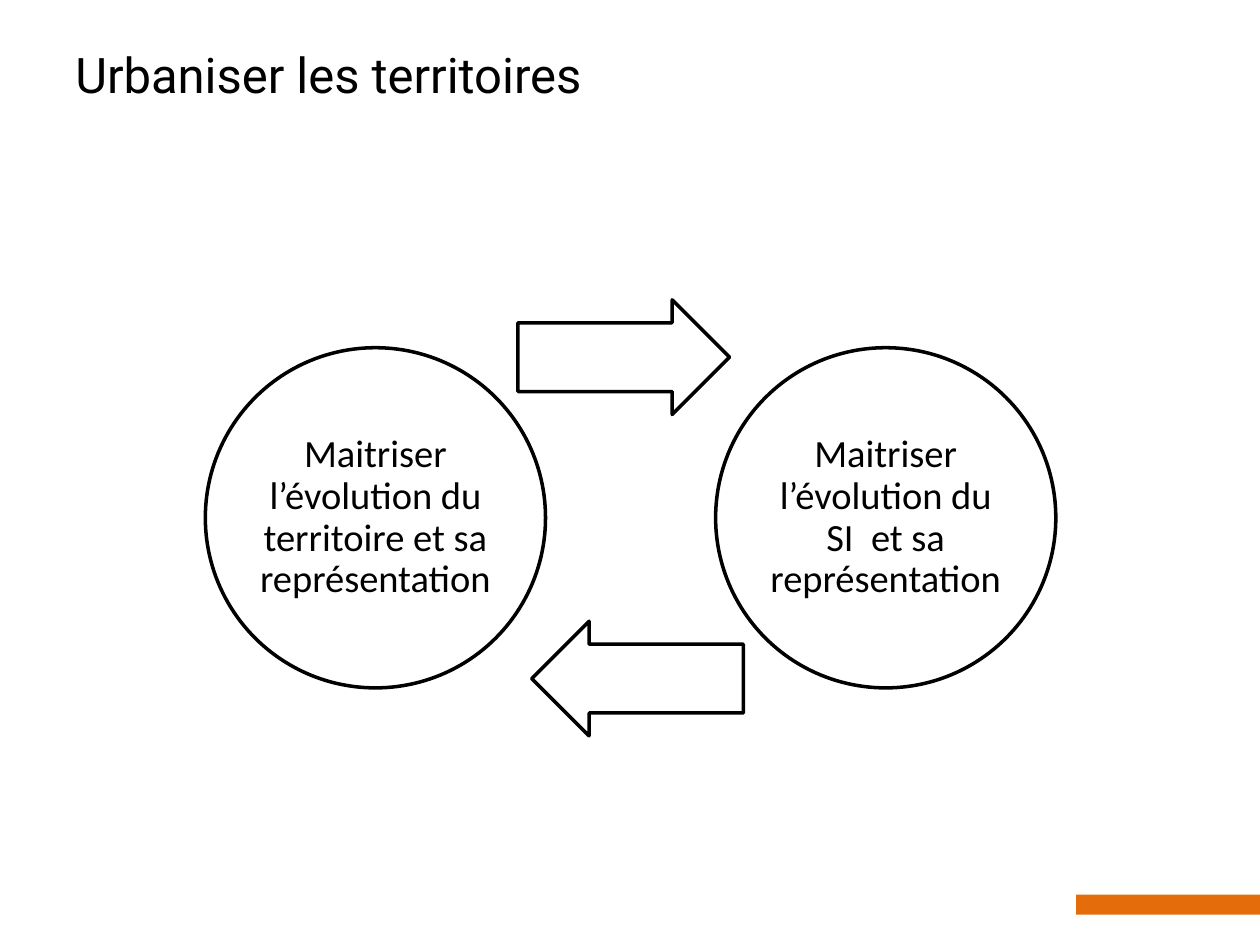
from pptx import Presentation
from pptx.dml.color import RGBColor
from pptx.enum.shapes import MSO_SHAPE
from pptx.enum.text import MSO_ANCHOR, PP_ALIGN
from pptx.util import Inches, Pt

RECTANGLE = MSO_SHAPE.RECTANGLE
OVAL = MSO_SHAPE.OVAL
RIGHT_ARROW = MSO_SHAPE.RIGHT_ARROW
TOP = MSO_ANCHOR.TOP
MIDDLE = MSO_ANCHOR.MIDDLE
LEFT = PP_ALIGN.LEFT
CENTER = PP_ALIGN.CENTER

BLACK = "000000"
ORANGE = "E46C0A"


def color(value):
    return RGBColor.from_string(value)


def set_text(sp, text, font, size, align, anchor, inset_x, inset_y):
    tf = sp.text_frame
    tf.word_wrap = True
    tf.vertical_anchor = anchor
    tf.margin_left = tf.margin_right = Inches(inset_x)
    tf.margin_top = tf.margin_bottom = Inches(inset_y)
    p = tf.paragraphs[0]
    p.text = text
    p.alignment = align
    r = p.runs[0]
    r.font.name = font
    r.font.size = Pt(size)
    r.font.color.rgb = color(BLACK)
    return p


def add_outline(s, kind, x, y, w, h):
    sp = s.shapes.add_shape(kind, Inches(x), Inches(y), Inches(w), Inches(h))
    sp.shadow.inherit = False
    sp.fill.background()
    sp.line.color.rgb = color(BLACK)
    sp.line.width = Pt(2)
    return sp


def add_title(s, x, y, w, h):
    sp = s.shapes.add_textbox(Inches(x), Inches(y), Inches(w), Inches(h))
    set_text(sp, "Urbaniser les territoires", "Roboto", 28, LEFT, TOP, 0.1, 0.05)


def add_accent(s, x, y, w, h):
    sp = s.shapes.add_shape(RECTANGLE, Inches(x), Inches(y), Inches(w), Inches(h))
    sp.shadow.inherit = False
    sp.fill.solid()
    sp.fill.fore_color.rgb = color(ORANGE)
    sp.line.fill.background()


def add_circle(s, text, x, y, size):
    sp = add_outline(s, OVAL, x, y, size, size)
    p = set_text(sp, text, "Calibri", 22, CENTER, MIDDLE, 0.03, 0.03)
    p.line_spacing = 0.9


def add_arrow(s, x, y, w, h, rotation):
    sp = add_outline(s, RIGHT_ARROW, x, y, w, h)
    sp.adjustments[0] = 0.6
    sp.adjustments[1] = 0.5
    sp.rotation = rotation


def add_cycle(s, x, y, w, h):
    size = 2.7
    arrow_w, arrow_h = 1.68, 0.91
    arrow_inset = 2.48
    circle_y = y + (h - size) / 2
    right_x = x + w - size
    add_circle(s, "Maitriser l’évolution du territoire et sa représentation", x, circle_y, size)
    add_arrow(s, x + arrow_inset, y, arrow_w, arrow_h, 0)
    add_circle(s, "Maitriser l’évolution du SI  et sa représentation", right_x, circle_y, size)
    add_arrow(s, x + w - arrow_inset - arrow_w, y + h - arrow_h, arrow_w, arrow_h, 180)


def main():
    prs = Presentation()
    prs.slide_width = Inches(10)
    prs.slide_height = Inches(7.5)
    s = prs.slides.add_slide(prs.slide_layouts[6])
    add_accent(s, 8.54, 7.1, 1.46, 0.16)
    add_title(s, 0.5, 0.3, 9, 1.25)
    add_cycle(s, 1.63, 2.38, 6.75, 3.46)
    prs.save("out.pptx")


if __name__ == "__main__":
    main()
